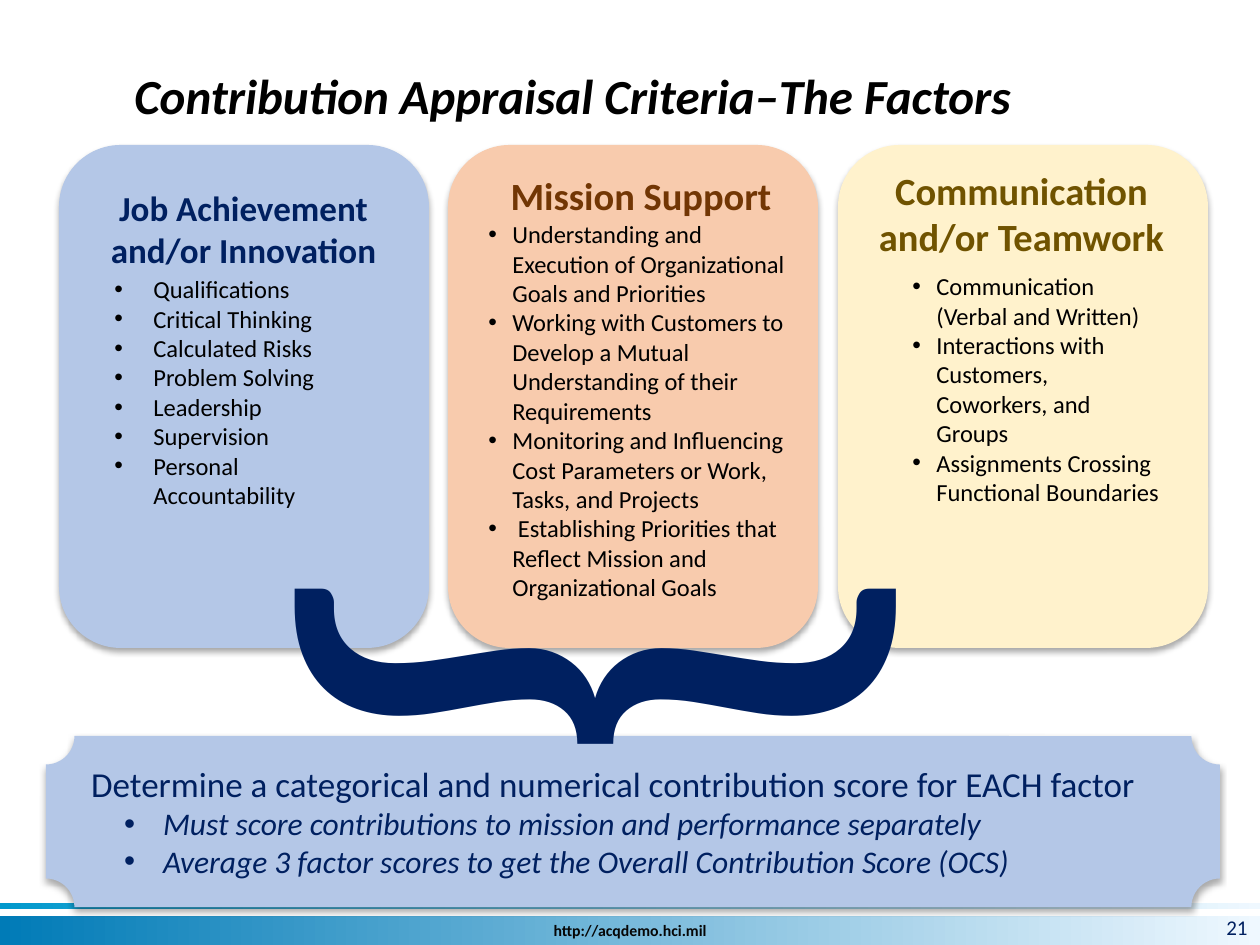
from dataclasses import dataclass

from lxml import etree
from pptx import Presentation
from pptx.dml.color import RGBColor
from pptx.enum.shapes import MSO_SHAPE
from pptx.enum.text import MSO_ANCHOR, PP_ALIGN
from pptx.oxml.ns import qn
from pptx.util import Pt

RECT = MSO_SHAPE.RECTANGLE
ROUND = MSO_SHAPE.ROUNDED_RECTANGLE
PLAQUE = MSO_SHAPE.PLAQUE
TOP = MSO_ANCHOR.TOP
MIDDLE = MSO_ANCHOR.MIDDLE
LEFT = PP_ALIGN.LEFT
CENTER = PP_ALIGN.CENTER
RIGHT = PP_ALIGN.RIGHT
SCALE = 914400 / 126


@dataclass(frozen=True)
class Theme:
    font: str = "Calibri"
    black: str = "000000"
    navy: str = "002060"
    blue: str = "B4C7E7"
    peach: str = "F8CBAD"
    cream: str = "FFF2CC"
    brown: str = "723604"
    olive: str = "705300"
    pale: str = "EFF8FF"
    cyan: str = "0299CD"
    deep: str = "007BB7"
    ink: str = "060606"
    title: int = 28
    head: int = 22
    lead: int = 20
    sub: int = 18
    body: int = 14
    page: int = 12
    foot: int = 9
    brace: int = 400


THEME = Theme()

PANELS = [
    (59, THEME.blue, "Job Achievement and/or Innovation", THEME.lead, THEME.navy,
     (89, 180, 309, 97), (102, 268, 285, 301), (39, 39),
     ["Qualifications", "Critical Thinking", "Calculated Risks", "Problem Solving",
      "Leadership", "Supervision", "Personal Accountability"]),
    (448, THEME.peach, "Mission Support", THEME.head, THEME.brown,
     (464, 166, 354, 59), (461, 213, 354, 398), (39, 24),
     ["Understanding and Execution of Organizational Goals and Priorities",
      "Working with Customers to Develop a Mutual Understanding of their Requirements",
      "Monitoring and Influencing Cost Parameters or Work, Tasks, and Projects",
      " Establishing Priorities that Reflect Mission and Organizational Goals"]),
    (838, THEME.cream, "Communication and/or Teamwork", THEME.head, THEME.olive,
     (859, 161, 325, 106), (900, 265, 277, 251), (24, 24),
     ["Communication (Verbal and Written)",
      "Interactions with Customers, Coworkers, and Groups",
      "Assignments Crossing Functional Boundaries"]),
]


def px(n):
    return round(n * SCALE)


def rgb(code):
    return RGBColor.from_string(code)


def style(para, size, color, bold=False, italic=False, align=LEFT):
    para.alignment = align
    for run in para.runs:
        font = run.font
        font.name = THEME.font
        font.size = Pt(size)
        font.bold = bold
        font.italic = italic
        font.color.rgb = rgb(color)


def bullet(para, margin, hang):
    props = para._p.get_or_add_pPr()
    props.set("marL", str(px(margin)))
    props.set("indent", str(-px(hang)))
    etree.SubElement(props, qn("a:buFont"), typeface="Arial")
    etree.SubElement(props, qn("a:buChar"), char="•")


def label(slide, box, text, size, color, anchor=TOP, **look):
    shape = slide.shapes.add_textbox(*map(px, box))
    frame = shape.text_frame
    frame.word_wrap = True
    frame.vertical_anchor = anchor
    frame.text = text
    style(frame.paragraphs[0], size, color, **look)
    return shape


def points(slide, box, items, indent):
    frame = slide.shapes.add_textbox(*map(px, box)).text_frame
    frame.word_wrap = True
    frame.text = "\n".join(items)
    for para in frame.paragraphs:
        bullet(para, *indent)
        style(para, THEME.body, THEME.black)


def shade(shape):
    effects = etree.SubElement(shape._element.spPr, qn("a:effectLst"))
    outer = etree.SubElement(effects, qn("a:outerShdw"), blurRad=str(Pt(3.5)),
                             dist=str(Pt(2.2)), dir="5400000", rotWithShape="0")
    tint = etree.SubElement(outer, qn("a:srgbClr"), val=THEME.black)
    etree.SubElement(tint, qn("a:alpha"), val="32000")


def card(slide, kind, box, color):
    shape = slide.shapes.add_shape(kind, *map(px, box))
    shape.fill.solid()
    shape.fill.fore_color.rgb = rgb(color)
    shape.line.fill.background()
    shade(shape)
    return shape


def band(slide, box, color):
    shape = slide.shapes.add_shape(RECT, *map(px, box))
    shape.shadow.inherit = False
    shape.line.fill.background()
    shape.fill.gradient()
    shape.fill.gradient_angle = 180
    for stop, code in zip(shape.fill.gradient_stops, (THEME.pale, color)):
        stop.color.rgb = rgb(code)
    return shape


def footer(slide):
    band(slide, (0, 903, 1260, 6), THEME.cyan)
    frame = band(slide, (0, 916, 1260, 29), THEME.deep).text_frame
    frame.vertical_anchor = MIDDLE
    frame.text = "http://acqdemo.hci.mil"
    style(frame.paragraphs[0], THEME.foot, THEME.ink, bold=True, align=CENTER)
    label(slide, (977, 902, 283, 51), "21", THEME.page, THEME.navy, MIDDLE, align=RIGHT)


def panel(slide, left, fill, head, size, color, top, low, indent, items):
    card(slide, ROUND, (left, 145, 370, 503), fill)
    label(slide, top, head, size, color, bold=True, align=CENTER)
    points(slide, low, items, indent)


def result(slide):
    frame = card(slide, PLAQUE, (46, 736, 1174, 171), THEME.blue).text_frame
    frame.word_wrap = True
    frame.vertical_anchor = TOP
    frame.margin_left = px(25)
    frame.text = "\n".join([
        "Determine a categorical and numerical contribution score for EACH factor",
        "Must score contributions to mission and performance separately",
        "Average 3 factor scores to get the Overall Contribution Score (OCS)",
    ])
    lead, *rest = frame.paragraphs
    style(lead, THEME.lead, THEME.navy)
    for para in rest:
        bullet(para, 72, 39)
        style(para, THEME.sub, THEME.navy, italic=True)


def main():
    deck = Presentation()
    deck.slide_width = px(1260)
    deck.slide_height = px(945)
    slide = deck.slides.add_slide(deck.slide_layouts[6])
    footer(slide)
    title = label(slide, (122, 71, 912, 58), "Contribution Appraisal Criteria–The Factors",
                  THEME.title, THEME.black, MIDDLE, bold=True, italic=True)
    title.text_frame.paragraphs[0].line_spacing = 0.85
    for item in PANELS:
        panel(slide, *item)
    result(slide)
    brace = label(slide, (549, 224, 234, 861), "}", THEME.brace, THEME.navy)
    brace.rotation = 90
    deck.save("out.pptx")


if __name__ == "__main__":
    main()
